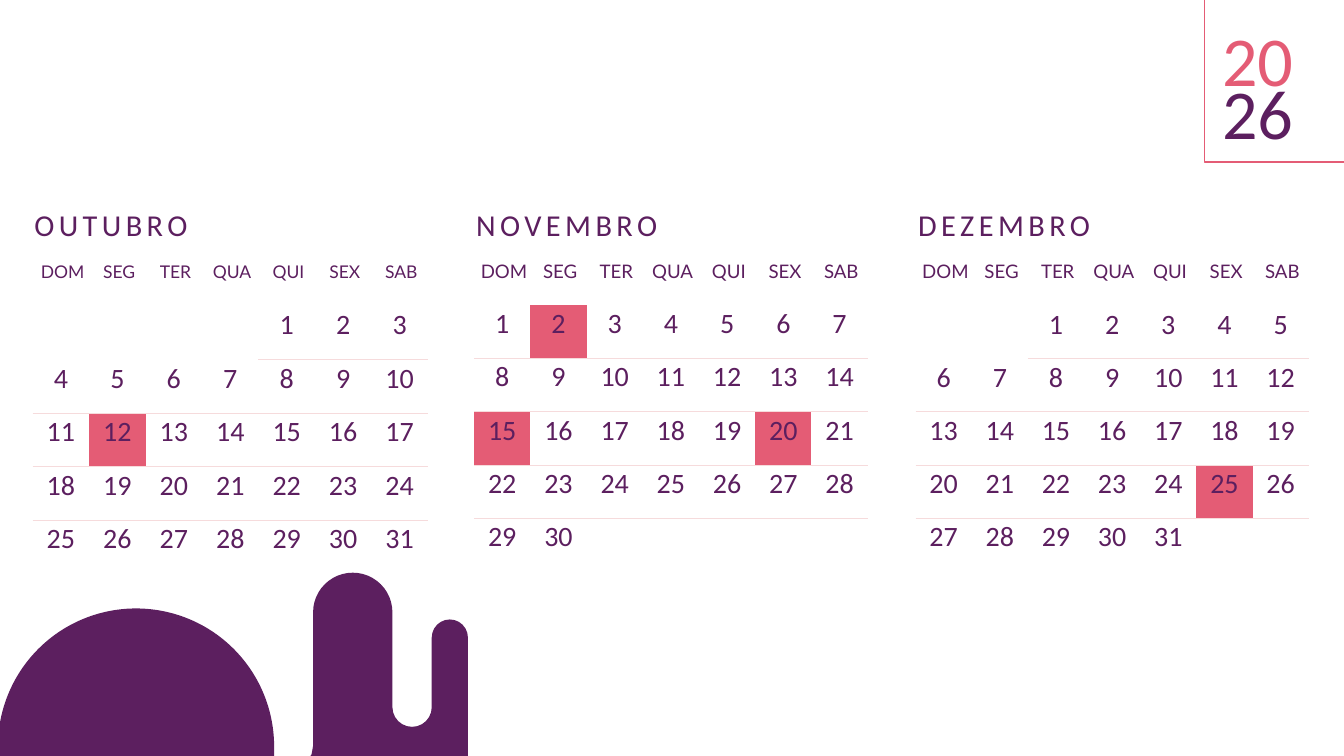
from lxml import etree
from pptx import Presentation
from pptx.dml.color import RGBColor
from pptx.enum import shapes, text
from pptx.oxml import ns
from pptx.util import Pt

PLUM, PINK, BLUSH = "5C1F5F", "E45C75", "F6DBDC"
NO_STYLE = "{2D5ABB26-0587-4C30-8999-92F81FD0307C}"
WEEKDAYS = ["DOM", "SEG", "TER", "QUA", "QUI", "SEX", "SAB"]


def write(paragraph, words, size, font="Calibri", color=PLUM, align=None,
          line_spacing=None, letter_spacing=None):
    paragraph.alignment = align
    paragraph.line_spacing = line_spacing
    run = paragraph.add_run()
    run.text = words
    run.font.size = Pt(size)
    run.font.name = font
    run.font.color.rgb = RGBColor.from_string(color)
    if letter_spacing:
        run.font._element.set("spc", str(round(letter_spacing * 100)))


presentation = Presentation()
presentation.slide_width, presentation.slide_height = Pt(1152), Pt(648)
slide = presentation.slides.add_slide(presentation.slide_layouts[6])

# name, first weekday, days, holidays, table top, column width, week height, header size
months = [
    ("OUTUBRO", 4, 31, {12}, 222.4, 48.4, 45.8, 15),
    ("NOVEMBRO", 0, 30, {2, 15, 20}, 221.5, 48.2, 45.65, 16),
    ("DEZEMBRO", 2, 31, {25}, 221.8, 48.15, 45.5, 16),
]
for index, month in enumerate(months):
    month_box = slide.shapes.add_textbox(Pt(22.3 + 378.75 * index), Pt(173.5),
                                         Pt(220), Pt(38.9))
    month_box.text_frame.word_wrap = True
    write(month_box.text_frame.paragraphs[0], month[0], 26, letter_spacing=3.8)

# Year in its corner frame
year_box = slide.shapes.add_textbox(Pt(1040.4), Pt(34.4), Pt(86.4), Pt(102.2))
year_frame = year_box.text_frame
year_frame.word_wrap = False
write(year_frame.paragraphs[0], "20", 60, color=PINK, line_spacing=0.63)
write(year_frame.add_paragraph(), "26", 60, line_spacing=0.63)

corner = slide.shapes.add_shape(shapes.MSO_SHAPE.RECTANGLE,
                                Pt(1032.5), Pt(-25.2), Pt(149), Pt(164.2))
corner.shadow.inherit = False
corner.fill.background()
corner.line.color.rgb = RGBColor.from_string(PINK)
corner.line.width = Pt(1.5)

for index, (name, first, days, holidays, top, column_width, week_height,
            header_size) in enumerate(months):
    table = slide.shapes.add_table(6, 7, Pt(28 + 378.4 * index), Pt(top),
                                   Pt(column_width * 7),
                                   Pt(40.3 + week_height * 5)).table
    table.first_row = table.horz_banding = False
    table._tbl.tblPr.find(ns.qn("a:tableStyleId")).text = NO_STYLE
    for column in table.columns:
        column.width = Pt(column_width)
    for number, row in enumerate(table.rows):
        row.height = Pt(week_height if number else 40.3)
        for weekday, cell in enumerate(row.cells):
            cell.margin_left, cell.margin_right = Pt(3), Pt(3 if number else 0)
            cell.margin_top = cell.margin_bottom = Pt(1.5)
            cell.fill.background()
            paragraph = cell.text_frame.paragraphs[0]
            if number == 0:
                write(paragraph, WEEKDAYS[weekday], header_size, font="Lato",
                      align=text.PP_ALIGN.CENTER)
                continue
            day = (number - 1) * 7 + weekday - first + 1
            if not 1 <= day <= days:
                continue
            write(paragraph, str(day), 24, align=text.PP_ALIGN.CENTER)
            if day in holidays:
                cell.fill.solid()
                cell.fill.fore_color.rgb = RGBColor.from_string(PINK)
            if number < 5:
                border = etree.Element(ns.qn("a:lnB"), w=str(Pt(1)))
                fill = etree.SubElement(border, ns.qn("a:solidFill"))
                etree.SubElement(fill, ns.qn("a:srgbClr"), val=BLUSH)
                cell._tc.get_or_add_tcPr().insert(0, border)

# Dome and towers: corner points, and (radius, start angle, sweep) for rounded sides
dome = [(0, 619.4), (235, 640), (235, 650.9), (0, 650.9)]
towers = [(268.4, 524.9), (336.4, 524.9), (336.4, 606.2), (370.1, 606.2),
          (370.1, 546.5), (401.1, 546.5), (401.1, 650.9), (264.2, 650.9),
          (267.1, 646.6), (268.4, 639.4)]
rounded_sides = {dome[1]: (118.4, 190, 170), towers[1]: (34, 180, 180),
                 towers[3]: (16.85, 180, -180), towers[5]: (15.5, 180, 180)}

builder = slide.shapes.build_freeform(*dome[0], scale=Pt(1))
builder = slide.shapes.build_freeform(Pt(dome[0][0]), Pt(dome[0][1]))
builder.add_line_segments([(Pt(x), Pt(y)) for x, y in dome[1:]])
builder.move_to(Pt(towers[0][0]), Pt(towers[0][1]))
builder.add_line_segments([(Pt(x), Pt(y)) for x, y in towers[1:]])
skyline = builder.convert_to_shape()
sides = list(skyline._element.iter(ns.qn("a:lnTo")))
for side, end in zip(sides, dome[1:] + towers[1:]):
    if end in rounded_sides:
        radius, start, sweep = rounded_sides[end]
        curve = etree.Element(ns.qn("a:arcTo"), wR=str(Pt(radius)), hR=str(Pt(radius)),
                              stAng=str(start * 60000), swAng=str(sweep * 60000))
        side.getparent().replace(side, curve)

# The rounded tops rise above the corner points, so the frame grows to hold them
rise = Pt(34)
skyline.shadow.inherit = False
skyline.fill.solid()
skyline.fill.fore_color.rgb = RGBColor.from_string(PLUM)
skyline.line.fill.background()
outline = next(skyline._element.iter(ns.qn("a:path")))
for point in outline.iter(ns.qn("a:pt")):
    point.set("y", str(int(point.get("y")) + rise))
skyline.top, skyline.height = skyline.top - rise, skyline.height + rise
outline.set("h", str(skyline.height))

presentation.save("out.pptx")
